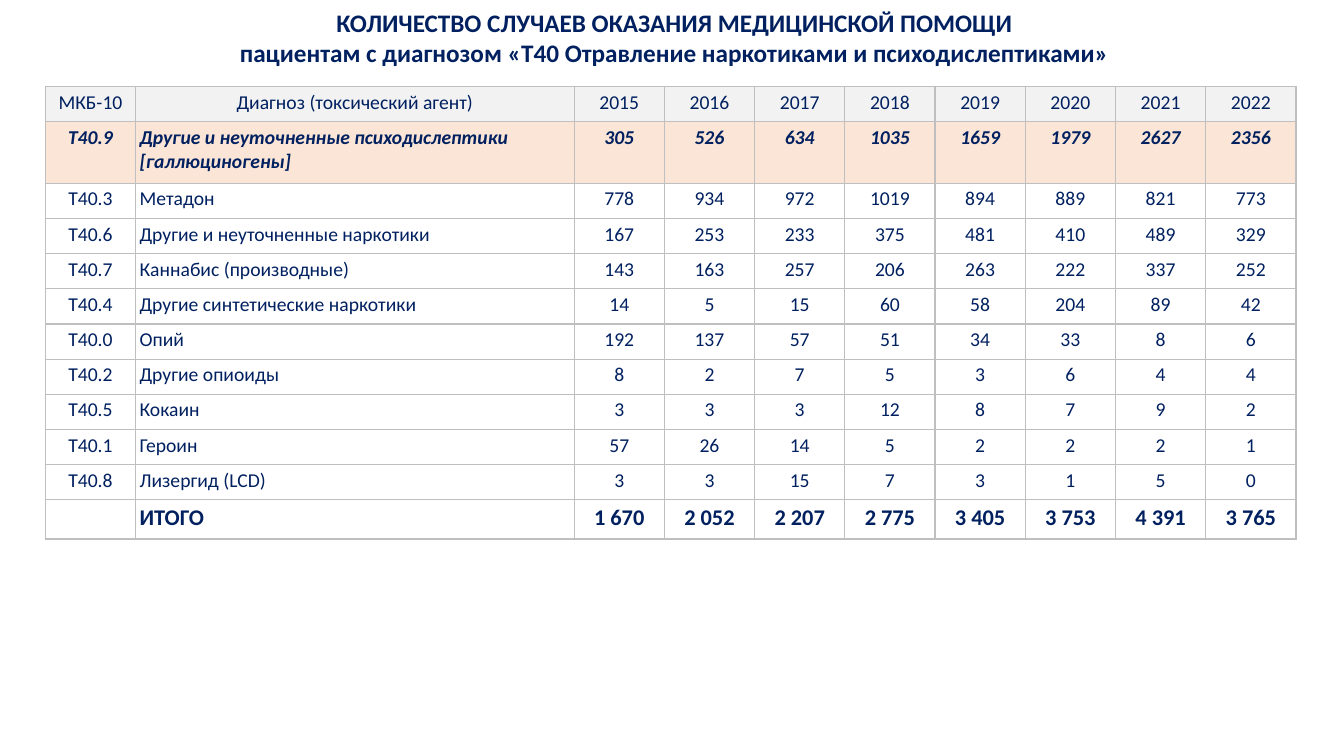
from lxml.etree import SubElement
from pptx import Presentation
from pptx.dml.color import RGBColor
from pptx.enum.text import MSO_AUTO_SIZE, PP_ALIGN
from pptx.oxml.ns import qn
from pptx.util import Inches, Pt

NAVY, GRAY, PEACH, BORDER = "002060", "F2F2F2", "FBE5D6", "BFBFBF"


def rgb(value):
    return RGBColor.from_string(value)


def style(p, size, bold=False, italic=False, align=PP_ALIGN.CENTER):
    p.alignment = align
    f = p.font
    f.name, f.size, f.bold, f.italic = "Calibri", Pt(size), bold, italic
    f.color.rgb = rgb(NAVY)


prs = Presentation()
prs.slide_width, prs.slide_height = Inches(13.33), Inches(7.5)
s = prs.slides.add_slide(prs.slide_layouts[6])

# Table contents
rows = [
    ["МКБ-10", "Диагноз (токсический агент)", *range(2015, 2023)],
    ["T40.9", "Другие и неуточненные психодислептики [галлюциногены]",
     305, 526, 634, 1035, 1659, 1979, 2627, 2356],
    ["T40.3", "Метадон", 778, 934, 972, 1019, 894, 889, 821, 773],
    ["T40.6", "Другие и неуточненные наркотики", 167, 253, 233, 375, 481, 410, 489, 329],
    ["T40.7", "Каннабис (производные)", 143, 163, 257, 206, 263, 222, 337, 252],
    ["T40.4", "Другие синтетические наркотики", 14, 5, 15, 60, 58, 204, 89, 42],
    ["T40.0", "Опий", 192, 137, 57, 51, 34, 33, 8, 6],
    ["T40.2", "Другие опиоиды", 8, 2, 7, 5, 3, 6, 4, 4],
    ["T40.5", "Кокаин", 3, 3, 3, 12, 8, 7, 9, 2],
    ["T40.1", "Героин", 57, 26, 14, 5, 2, 2, 2, 1],
    ["T40.8", "Лизергид (LCD)", 3, 3, 15, 7, 3, 1, 5, 0],
    ["", "ИТОГО", "1 670", "2 052", "2 207", "2 775", "3 405", "3 753", "4 391", "3 765"],
]
HEADER, TOP_AGENT, TOTAL = 0, 1, len(rows) - 1
fills = {HEADER: GRAY, TOP_AGENT: PEACH}
heights = {TOP_AGENT: 0.61, TOTAL: 0.39}

# Table grid
table = s.shapes.add_table(len(rows), len(rows[0]), Inches(0.45), Inches(0.86),
                           Inches(12.41), Inches(4.49)).table
table.first_row = table.horz_banding = False
for c, column in enumerate(table.columns):
    column.width = Inches(4.35 if c == 1 else 0.895)
for r, row in enumerate(table.rows):
    row.height = Inches(heights.get(r, 0.349))

# Table cells
for r, values in enumerate(rows):
    for c, value in enumerate(values):
        cell = table.cell(r, c)
        cell.margin_left = cell.margin_right = Inches(0.04)
        cell.margin_top = cell.margin_bottom = Inches(0.04)
        for side in ("a:lnL", "a:lnR", "a:lnT", "a:lnB"):
            ln = SubElement(cell._tc.get_or_add_tcPr(), qn(side), w=str(Pt(1)))
            SubElement(SubElement(ln, qn("a:solidFill")), qn("a:srgbClr"), val=BORDER)
        if r in fills:
            cell.fill.solid()
            cell.fill.fore_color.rgb = rgb(fills[r])
        else:
            cell.fill.background()
        cell.text = str(value)
        left = c == 1 and r != HEADER
        style(cell.text_frame.paragraphs[0], 16 if r == TOTAL else 14,
              bold=r in (TOP_AGENT, TOTAL), italic=r == TOP_AGENT,
              align=PP_ALIGN.LEFT if left else PP_ALIGN.CENTER)

# Title
tf = s.shapes.add_textbox(Inches(0.66), Inches(0.02), Inches(12.06), Inches(0.71)).text_frame
tf.word_wrap = True
tf.auto_size = MSO_AUTO_SIZE.SHAPE_TO_FIT_TEXT
tf.text = ("КОЛИЧЕСТВО СЛУЧАЕВ ОКАЗАНИЯ МЕДИЦИНСКОЙ ПОМОЩИ\n"
           "пациентам с диагнозом «T40 Отравление наркотиками и психодислептиками»")
for p in tf.paragraphs:
    style(p, 18, bold=True)

prs.save("out.pptx")
